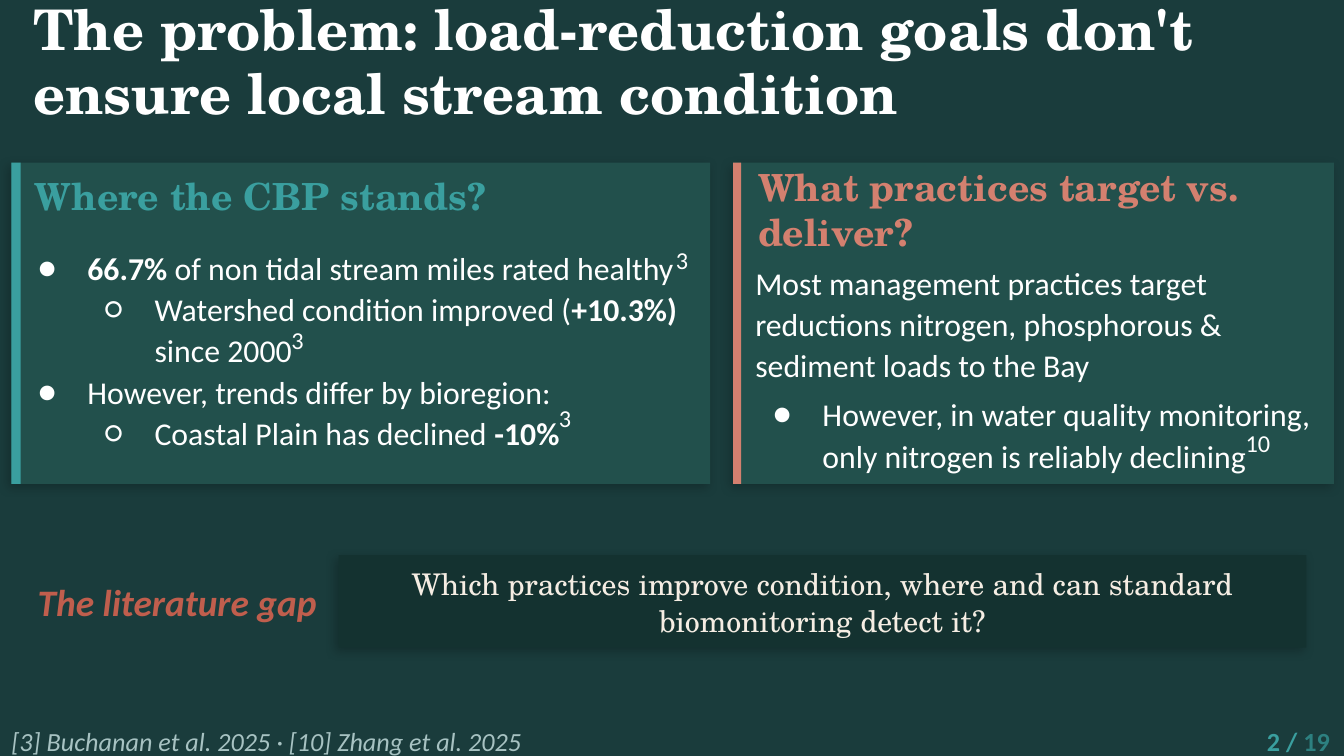
from dataclasses import dataclass, replace

from lxml.etree import SubElement
from pptx import Presentation
from pptx.dml.color import RGBColor
from pptx.enum.shapes import MSO_SHAPE
from pptx.enum.text import MSO_ANCHOR, PP_ALIGN
from pptx.oxml.ns import qn
from pptx.util import Emu, Pt

EMU_PER_PX = 4572


def px(count):
    return Emu(count * EMU_PER_PX)


def rgb(color):
    return RGBColor.from_string(color)


@dataclass(frozen=True)
class TextStyle:
    size: int
    font: str
    color: str
    bold: bool = False
    italic: bool = False


@dataclass(frozen=True)
class Theme:
    background: str = "1A3C3C"
    panel: str = "22504C"
    question_panel: str = "143230"
    teal: str = "3A9F9F"
    coral: str = "D4806F"
    shadow: str = "000000"
    title: TextStyle = TextStyle(30, "TeX Gyre Schola", "FFFFFF", bold=True)
    heading: TextStyle = TextStyle(20, "TeX Gyre Schola", "3A9F9F", bold=True)
    body: TextStyle = TextStyle(17, "Calibri", "FFFFFF")
    strong: TextStyle = TextStyle(17, "Calibri", "FFFFFF", bold=True)
    citation: TextStyle = TextStyle(13, "Calibri", "FFFFFF")
    question: TextStyle = TextStyle(16, "TeX Gyre Schola", "F5EDE3")
    gap_label: TextStyle = TextStyle(20, "Calibri", "C05E4D", bold=True, italic=True)
    references: TextStyle = TextStyle(14, "Calibri", "A7C2C2", italic=True)
    page_number: TextStyle = TextStyle(14, "Calibri", "3A9F9F", bold=True)
    page_total: TextStyle = TextStyle(14, "Calibri", "2D8080", bold=True)


@dataclass(frozen=True)
class Line:
    spans: tuple
    level: int = 0
    bullet: str = ""
    space_before: float = 0


class SlideBuilder:
    def __init__(self, deck, theme):
        self.theme = theme
        self.page = deck.slides.add_slide(deck.slide_layouts[6])
        fill = self.page.background.fill
        fill.solid()
        fill.fore_color.rgb = rgb(theme.background)

    def rectangle(self, left, top, width, height, color, shadow=False):
        box = self.page.shapes.add_shape(
            MSO_SHAPE.RECTANGLE, px(left), px(top), px(width), px(height))
        box.fill.solid()
        box.fill.fore_color.rgb = rgb(color)
        box.line.fill.background()
        box.shadow.inherit = False
        if shadow:
            effects = box.element.spPr.find(qn("a:effectLst"))
            outer = SubElement(effects, qn("a:outerShdw"), blurRad=str(Pt(5.7)),
                               dist=str(Pt(2.4)), dir="8100000", algn="bl",
                               rotWithShape="0")
            shade = SubElement(outer, qn("a:srgbClr"), val=self.theme.shadow)
            SubElement(shade, qn("a:alpha"), val="22000")

    def panel(self, left, top, width, height, accent, accent_width):
        self.rectangle(left, top, width, height, self.theme.panel, shadow=True)
        self.rectangle(left, top, accent_width, height, accent)

    def text(self, left, top, width, height, lines, spacing=1.0,
             align=PP_ALIGN.LEFT, anchor=MSO_ANCHOR.MIDDLE, inset=(0, 0)):
        box = self.page.shapes.add_textbox(px(left), px(top), px(width), px(height))
        frame = box.text_frame
        frame.word_wrap = True
        frame.vertical_anchor = anchor
        frame.margin_left = frame.margin_right = px(inset[0])
        frame.margin_top = frame.margin_bottom = px(inset[1])
        for index, line in enumerate(lines):
            para = frame.add_paragraph() if index else frame.paragraphs[0]
            para.alignment = align
            para.line_spacing = spacing
            para.space_before = Pt(line.space_before)
            para.level = line.level
            if line.bullet:
                self.bullet(para, line)
            for words, style in line.spans:
                self.span(para, words, style)

    def label(self, left, top, width, height, words, style, **layout):
        self.text(left, top, width, height, [Line(((words, style),))], **layout)

    def bullet(self, para, line):
        style = self.theme.body
        properties = para._p.get_or_add_pPr()
        properties.set("marL", str(px(100 * (line.level + 1))))
        properties.set("indent", str(px(-74)))
        color = SubElement(properties, qn("a:buClr"))
        SubElement(color, qn("a:srgbClr"), val=style.color)
        SubElement(properties, qn("a:buSzPts"), val=str(style.size * 100))
        SubElement(properties, qn("a:buFont"), typeface=style.font)
        SubElement(properties, qn("a:buChar"), char=line.bullet)

    def span(self, para, words, style):
        span = para.add_run()
        span.text = words
        span.font.size = Pt(style.size)
        span.font.name = style.font
        span.font.bold = style.bold
        span.font.italic = style.italic
        span.font.color.rgb = rgb(style.color)

    def citation(self, left, top, number):
        line = Line(((number, self.theme.citation),), space_before=4.3)
        self.text(left, top, 94, 84, [line], spacing=1.08,
                  anchor=MSO_ANCHOR.TOP, inset=(20, 20))


def main():
    deck = Presentation()
    deck.slide_width, deck.slide_height = px(2000), px(1125)
    theme = Theme()
    slide = SlideBuilder(deck, theme)
    body, strong = theme.body, theme.strong

    slide.label(30, 4, 1870, 180,
                "The problem: load-reduction goals don't ensure local stream condition",
                theme.title, spacing=0.95, inset=(20, 10))

    slide.panel(17, 242, 1040, 478, theme.teal, 14)
    slide.label(52, 242, 934, 98, "Where the CBP stands?", theme.heading)
    slide.text(30, 337, 1016, 364, [
        Line((("66.7%", strong),
              (" of non tidal stream miles rated healthy", body)), bullet="●"),
        Line((("Watershed condition improved (", body), ("+10.3%) ", strong),
              ("since 2000", body)), level=1, bullet="○"),
        Line((("However, trends differ by bioregion:", body),), bullet="●"),
        Line((("Coastal Plain has declined ", body), ("-10%", strong)),
             level=1, bullet="○"),
    ], spacing=1.08)

    slide.panel(1091, 242, 894, 478, theme.coral, 12)
    slide.label(1128, 262, 810, 98, "What practices target vs. deliver?",
                replace(theme.heading, color=theme.coral))
    slide.text(1124, 387, 848, 320, [
        Line((("Most management practices target reductions nitrogen, "
               "phosphorous & sediment loads to the Bay", body),)),
        Line((("However, in water quality monitoring, only nitrogen is "
               "reliably declining", body),), bullet="●", space_before=4.3),
    ], spacing=1.08)

    slide.rectangle(504, 826, 1440, 138, theme.question_panel, shadow=True)
    slide.label(504, 815, 1440, 160,
                "Which practices improve condition, where and can standard "
                "biomonitoring detect it?",
                theme.question, spacing=1.05, align=PP_ALIGN.CENTER)
    slide.label(56, 857, 422, 76, "The literature gap", theme.gap_label)

    slide.label(17, 1080, 1716, 45, "[3] Buchanan et al. 2025 · [10] Zhang et al. 2025",
                theme.references)
    slide.text(1813, 1080, 166, 45,
               [Line((("2 / ", theme.page_number), ("19", theme.page_total)))],
               align=PP_ALIGN.RIGHT)

    for left, top, number in ((1834, 614, "10"), (812, 577, "3"),
                              (414, 460, "3"), (986, 342, "3")):
        slide.citation(left, top, number)

    deck.save("out.pptx")


if __name__ == "__main__":
    main()
